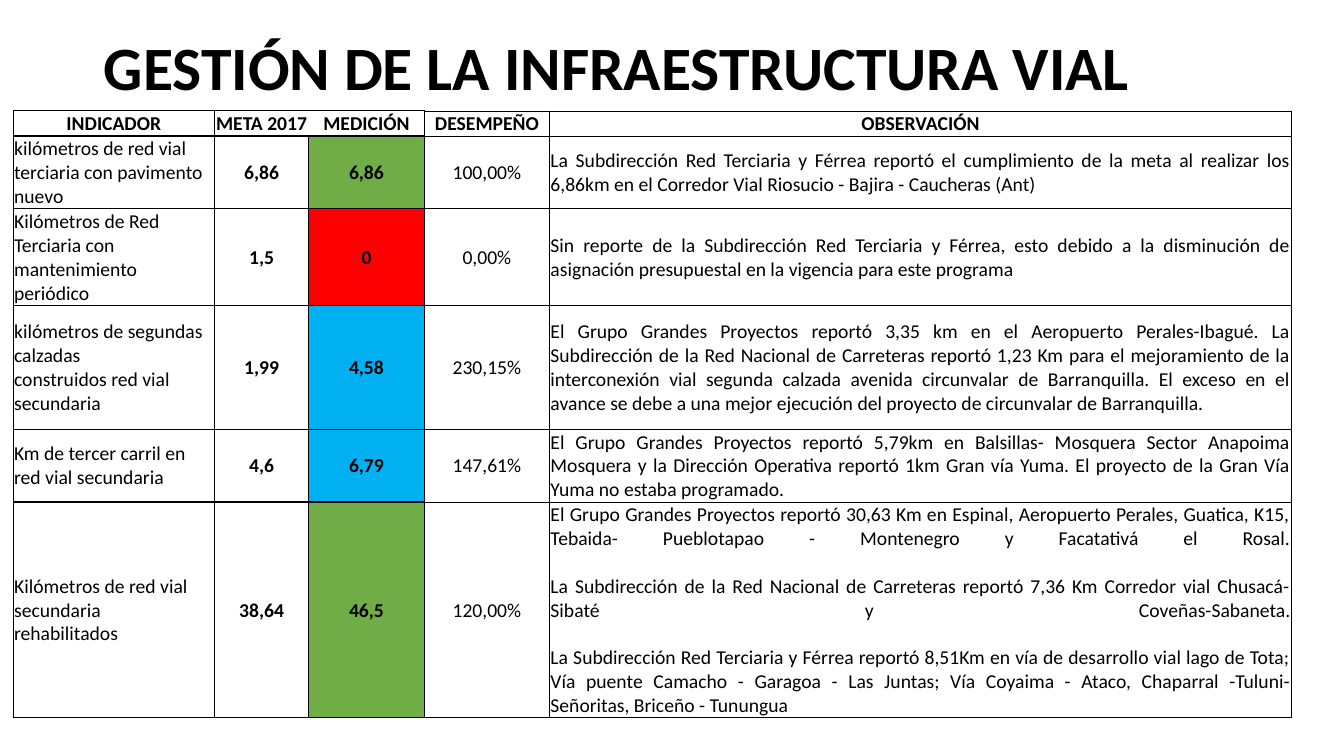
from lxml import etree
from pptx import Presentation
from pptx.dml.color import RGBColor
from pptx.enum.text import MSO_ANCHOR, MSO_AUTO_SIZE, PP_ALIGN
from pptx.oxml.ns import qn
from pptx.util import Inches, Pt

LEFT, CENTER, JUSTIFY = PP_ALIGN.LEFT, PP_ALIGN.CENTER, PP_ALIGN.JUSTIFY
MIDDLE = MSO_ANCHOR.MIDDLE
NO_AUTOFIT = MSO_AUTO_SIZE.NONE

BLACK = RGBColor(0x00, 0x00, 0x00)
GREEN = RGBColor(0x70, 0xAD, 0x47)
RED = RGBColor(0xFF, 0x00, 0x00)
BLUE = RGBColor(0x00, 0xB0, 0xF0)

# Table content: indicator, goal, measurement, performance, remark
HEADINGS = ["INDICADOR", "META 2017", "MEDICIÓN", "DESEMPEÑO", "OBSERVACIÓN"]
INDICATORS = [
    ["kilómetros de red vial terciaria con pavimento nuevo",
     "6,86", "6,86", "100,00%",
     "La Subdirección Red Terciaria y Férrea reportó el cumplimiento de la meta al "
     "realizar los 6,86km en el Corredor Vial Riosucio - Bajira - Caucheras (Ant)"],
    ["Kilómetros de Red Terciaria con\nmantenimiento periódico",
     "1,5", "0", "0,00%",
     "Sin reporte de la Subdirección Red Terciaria y Férrea, esto debido a la "
     "disminución de asignación presupuestal en la vigencia para este programa"],
    ["kilómetros de segundas calzadas\nconstruidos red vial secundaria",
     "1,99", "4,58", "230,15%",
     "El Grupo Grandes Proyectos reportó 3,35 km en el Aeropuerto Perales-Ibagué. La "
     "Subdirección de la Red Nacional de Carreteras reportó 1,23 Km para el "
     "mejoramiento de la interconexión vial segunda calzada avenida circunvalar de "
     "Barranquilla. El exceso en el avance se debe a una mejor ejecución del proyecto "
     "de circunvalar de Barranquilla."],
    ["Km de tercer carril en red vial secundaria",
     "4,6", "6,79", "147,61%",
     "El Grupo Grandes Proyectos reportó 5,79km en Balsillas- Mosquera Sector Anapoima "
     "Mosquera y la Dirección Operativa reportó 1km Gran vía Yuma. El proyecto de la "
     "Gran Vía Yuma no estaba programado."],
    ["Kilómetros de red vial secundaria\nrehabilitados",
     "38,64", "46,5", "120,00%",
     "El Grupo Grandes Proyectos reportó 30,63 Km en Espinal, Aeropuerto Perales, "
     "Guatica, K15, Tebaida- Pueblotapao - Montenegro y Facatativá el Rosal.\n\n"
     "La Subdirección de la Red Nacional de Carreteras reportó 7,36 Km Corredor vial "
     "Chusacá- Sibaté y Coveñas-Sabaneta.\n\n"
     "La Subdirección Red Terciaria y Férrea reportó 8,51Km en vía de desarrollo vial "
     "lago de Tota; Vía puente Camacho - Garagoa - Las Juntas; Vía Coyaima - Ataco, "
     "Chaparral -Tuluni- Señoritas, Briceño - Tunungua"],
]
STATUS_COLORS = [GREEN, RED, BLUE, BLUE, GREEN]
COLUMN_WIDTHS = [2, 0.93, 1.15, 1.24, 7.36]
ROW_HEIGHTS = [0.25, 0.72, 0.96, 1.23, 0.72, 2.14]
GOAL, MEASUREMENT, PERFORMANCE, REMARK = 1, 2, 3, 4


def write(frame, text, *, size, bold=False, align=LEFT, font="Calibri", color=BLACK):
    """Fill the first paragraph; newlines become line breaks of the same size."""
    para = frame.paragraphs[0]
    para.text = text
    para.alignment = align
    for span in para.runs:
        span.font.name = font
        span.font.size = Pt(size)
        span.font.bold = bold
        span.font.color.rgb = color
    for line_break in para._p.findall(qn("a:br")):
        etree.SubElement(line_break, qn("a:rPr"), sz=str(size * 100))
    return para


class IndicatorDeck:
    text_size = 14
    title_size = 44

    def __init__(self):
        self.deck = Presentation()
        self.deck.slide_width = Inches(13.33)
        self.deck.slide_height = Inches(7.5)
        self.page = self.deck.slides.add_slide(self.deck.slide_layouts[5])

    def title(self, text, left, top, width, height):
        box = self.page.shapes.title
        box.left, box.top = Inches(left), Inches(top)
        box.width, box.height = Inches(width), Inches(height)
        frame = box.text_frame
        frame.auto_size = NO_AUTOFIT
        frame.vertical_anchor = MIDDLE
        write(frame, text, size=self.title_size, bold=True).line_spacing = 0.9

    def borders(self, cell, widths):
        """Draw the left, right, top and bottom lines; a zero width hides one."""
        properties = cell._tc.get_or_add_tcPr()
        for side, width in zip("LRTB", widths):
            line = etree.SubElement(properties, qn(f"a:ln{side}"), w=str(Pt(width)))
            if width:
                fill = etree.SubElement(line, qn("a:solidFill"))
                etree.SubElement(fill, qn("a:srgbClr"), val=str(BLACK))
            else:
                etree.SubElement(line, qn("a:noFill"))

    def cell(self, cell, text, borders, fill=None, **text_format):
        cell.margin_left = cell.margin_right = cell.margin_top = Inches(0.01)
        cell.margin_bottom = 0
        cell.vertical_anchor = MIDDLE
        self.borders(cell, borders)
        if fill is None:
            cell.fill.background()
        else:
            cell.fill.solid()
            cell.fill.fore_color.rgb = fill
        write(cell.text_frame, text, size=self.text_size, **text_format)

    def table(self, left, top):
        records = [HEADINGS] + INDICATORS
        table = self.page.shapes.add_table(
            len(records), len(HEADINGS), Inches(left), Inches(top),
            Inches(sum(COLUMN_WIDTHS)), Inches(sum(ROW_HEIGHTS))).table
        table.first_row = table.horz_banding = False
        for column, width in zip(table.columns, COLUMN_WIDTHS):
            column.width = Inches(width)
        for row, height in zip(table.rows, ROW_HEIGHTS):
            row.height = Inches(height)

        for row, record in enumerate(records):
            heading = row == 0
            for column, text in enumerate(record):
                align = CENTER
                if not heading:
                    align = {0: LEFT, REMARK: JUSTIFY}.get(column, CENTER)
                # Goal and measurement headings share an open edge
                borders = [0.5, 0.5, 1, 1]
                if column == PERFORMANCE:
                    borders = [0.5] * 4
                elif column == REMARK:
                    borders = [0.5, 1, 0.5, 0.5]
                elif heading and column == GOAL:
                    borders[1] = 0
                elif heading and column == MEASUREMENT:
                    borders[0] = 0
                status = not heading and column == MEASUREMENT
                self.cell(table.cell(row, column), text, borders,
                          fill=STATUS_COLORS[row - 1] if status else None,
                          bold=heading or column in (GOAL, MEASUREMENT), align=align)

    def save(self):
        self.deck.save("out.pptx")


def main():
    slide = IndicatorDeck()
    # Heading
    slide.title("GESTIÓN DE LA INFRAESTRUCTURA VIAL", 0.93, -0.02, 11.5, 1.45)
    # Indicator results
    slide.table(0.13, 1.1)
    slide.save()


if __name__ == "__main__":
    main()
